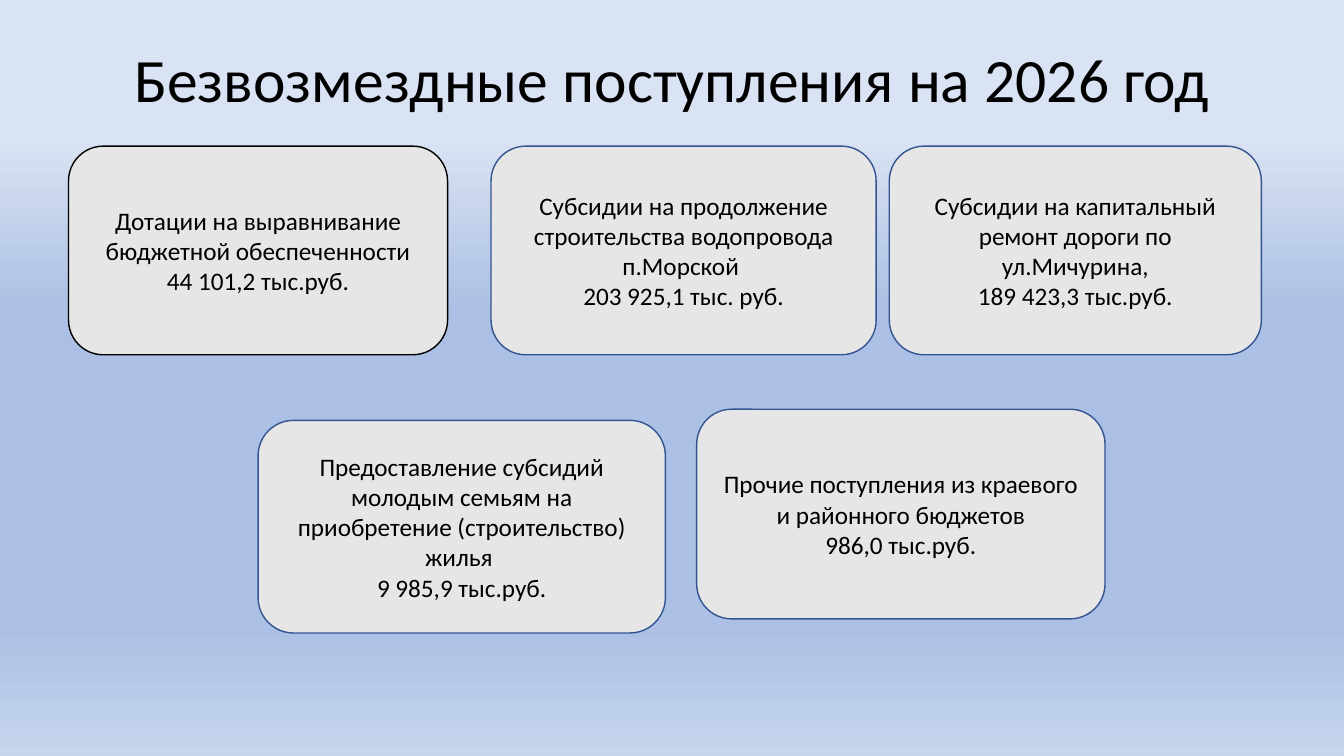
import lxml.etree
import pptx
import pptx.dml.color
import pptx.enum.shapes
import pptx.enum.text
import pptx.oxml.ns
import pptx.util

Inches = pptx.util.Inches
BLACK, BLUE, GREY = "000000", "325491", "E7E6E6"
STOPS = [(18, "DAE3F3"), (41, "ABC0E4"), (83, "ABC0E4"), (100, "C7D5ED")]

# left, top, width, height, line colour, purpose, amount
CARDS = [
    (0.68, 1.45, 3.76, 2.07, BLACK,
     "Дотации на выравнивание бюджетной обеспеченности", "44 101,2 тыс.руб."),
    (4.87, 1.45, 3.82, 2.07, BLUE,
     "Субсидии на продолжение строительства водопровода п.Морской ",
     "203 925,1 тыс. руб."),
    (8.82, 1.45, 3.69, 2.07, BLUE,
     "Субсидии на капитальный ремонт дороги по ул.Мичурина,",
     "189 423,3 тыс.руб."),
    (2.56, 4.17, 4.04, 2.11, BLUE,
     "Предоставление субсидий молодым семьям на приобретение "
     "(строительство) жилья ", "9 985,9 тыс.руб."),
    (6.91, 4.06, 4.05, 2.08, BLUE,
     "Прочие поступления из краевого и районного бюджетов",
     "986,0 тыс.руб."),
]


def color(code):
    return pptx.dml.color.RGBColor.from_string(code)


def paint_back(slide):
    fill = slide.background.fill
    fill.gradient()
    fill.gradient_angle = 270
    # Replace the two default stops
    stops = slide.element.xpath(".//a:gsLst")[0]
    for stop in list(stops):
        stops.remove(stop)
    qn = pptx.oxml.ns.qn
    for place, code in STOPS:
        stop = lxml.etree.SubElement(stops, qn("a:gs"), pos=str(place * 1000))
        lxml.etree.SubElement(stop, qn("a:srgbClr"), val=code)


def set_text(shape, text, size, spacing=1.0):
    frame = shape.text_frame
    frame.word_wrap = True
    frame.vertical_anchor = pptx.enum.text.MSO_ANCHOR.MIDDLE
    frame.text = text
    for para in frame.paragraphs:
        para.alignment = pptx.enum.text.PP_ALIGN.CENTER
        para.line_spacing = spacing
        for run in para.runs:
            run.font.name = "Calibri"
            run.font.size = pptx.util.Pt(size)
            run.font.color.rgb = color(BLACK)


def add_title(slide, text):
    box = slide.shapes.add_textbox(
        Inches(0.92), Inches(0.4), Inches(11.5), Inches(0.83))
    set_text(box, text, 44, 0.9)


def add_card(slide, left, top, width, height, line, purpose, amount):
    card = slide.shapes.add_shape(
        pptx.enum.shapes.MSO_SHAPE.ROUNDED_RECTANGLE,
        Inches(left), Inches(top), Inches(width), Inches(height))
    card.shadow.inherit = False
    card.fill.solid()
    card.fill.fore_color.rgb = color(GREY)
    card.line.color.rgb = color(line)
    card.line.width = pptx.util.Pt(1)
    set_text(card, f"{purpose}\n{amount}", 18)


def main():
    deck = pptx.Presentation()
    deck.slide_width, deck.slide_height = Inches(13.33), Inches(7.5)
    slide = deck.slides.add_slide(deck.slide_layouts[6])
    paint_back(slide)
    add_title(slide, "Безвозмездные поступления на 2026 год")
    for card in CARDS:
        add_card(slide, *card)
    deck.save("out.pptx")


if __name__ == "__main__":
    main()
